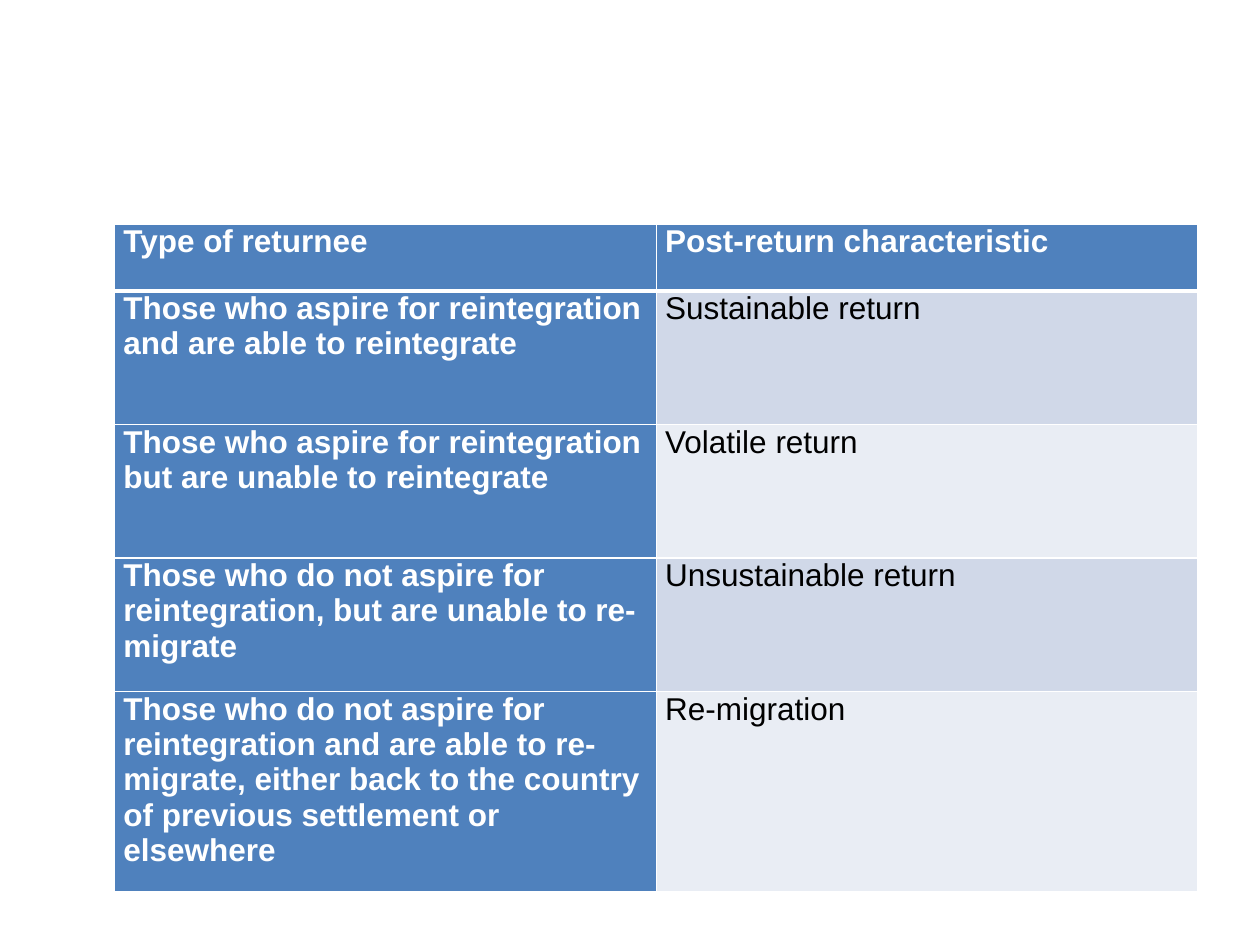
from lxml import etree
from pptx import Presentation
from pptx import util as u
from pptx.dml.color import RGBColor
from pptx.enum import text
from pptx.oxml import ns

WIDTH, HEIGHT = u.Inches(10), u.Inches(7.5)
ROW_UNIT = u.Inches(0.53)
COLUMN = u.Inches(4.3)
ROW_SPANS = [1, 2, 2, 2, 3]
WHITE, BLACK, BLUE = "FFFFFF", "000000", "4F81BD"
BANDS = ["D0D8E8", "E9EDF4"]
RETURNEES = [
    ("Type of returnee", "Post-return characteristic"),
    ("Those who aspire for reintegration and are able to reintegrate", "Sustainable return"),
    ("Those who aspire for reintegration but are unable to reintegrate", "Volatile return"),
    ("Those who do not aspire for reintegration, but are unable to re-migrate",
     "Unsustainable return"),
    ("Those who do not aspire for reintegration and are able to re-migrate, "
     "either back to the country of previous settlement or elsewhere", "Re-migration"),
]
CELL_FORMAT = {
    "margin_left": u.Inches(0.07), "margin_right": u.Inches(0.07),
    "margin_top": 0, "margin_bottom": 0,
    "vertical_anchor": text.MSO_ANCHOR.TOP,
}
FONT_FORMAT = {"name": "Arial", "size": u.Pt(18)}


def colour(value):
    return RGBColor.from_string(value)


def apply_format(target, values):
    for name, value in values.items():
        setattr(target, name, value)


def add_borders(cell, widths):
    properties = cell._tc.get_or_add_tcPr()
    for index, (side, width) in enumerate(widths.items()):
        line = etree.Element(ns.qn(f"a:ln{side}"), w=str(u.Pt(width)))
        fill = etree.SubElement(line, ns.qn("a:solidFill"))
        etree.SubElement(fill, ns.qn("a:srgbClr"), val=WHITE)
        properties.insert(index, line)


def fill_cell(cell, wording, row, column):
    strong = row == 0 or column == 0
    apply_format(cell, CELL_FORMAT)
    cell.fill.solid()
    cell.fill.fore_color.rgb = colour(BLUE if strong else BANDS[(row - 1) % 2])
    para = cell.text_frame.paragraphs[0]
    para.space_after = u.Pt(6)
    span = para.add_run()
    span.text = wording
    apply_format(span.font, {**FONT_FORMAT, "bold": strong})
    span.font.color.rgb = colour(WHITE if strong else BLACK)
    add_borders(cell, {"L": 1, "R": 1, "T": 3 if row == 1 else 1, "B": 3 if row == 0 else 1})


def add_grid(page, rows, left, top):
    columns = len(rows[0])
    frame = page.shapes.add_table(len(rows), columns, left, top,
                                  COLUMN * columns, ROW_UNIT * sum(ROW_SPANS))
    table = frame.table
    for column in table.columns:
        column.width = COLUMN
    for row, share in zip(table.rows, ROW_SPANS):
        row.height = ROW_UNIT * share
    for row, wordings in enumerate(rows):
        for column, wording in enumerate(wordings):
            fill_cell(table.cell(row, column), wording, row, column)


def main():
    deck = Presentation()
    apply_format(deck, {"slide_width": WIDTH, "slide_height": HEIGHT})
    page = deck.slides.add_slide(deck.slide_layouts[6])
    add_grid(page, RETURNEES, u.Inches(0.91), u.Inches(1.78))
    deck.save("out.pptx")


if __name__ == "__main__":
    main()
